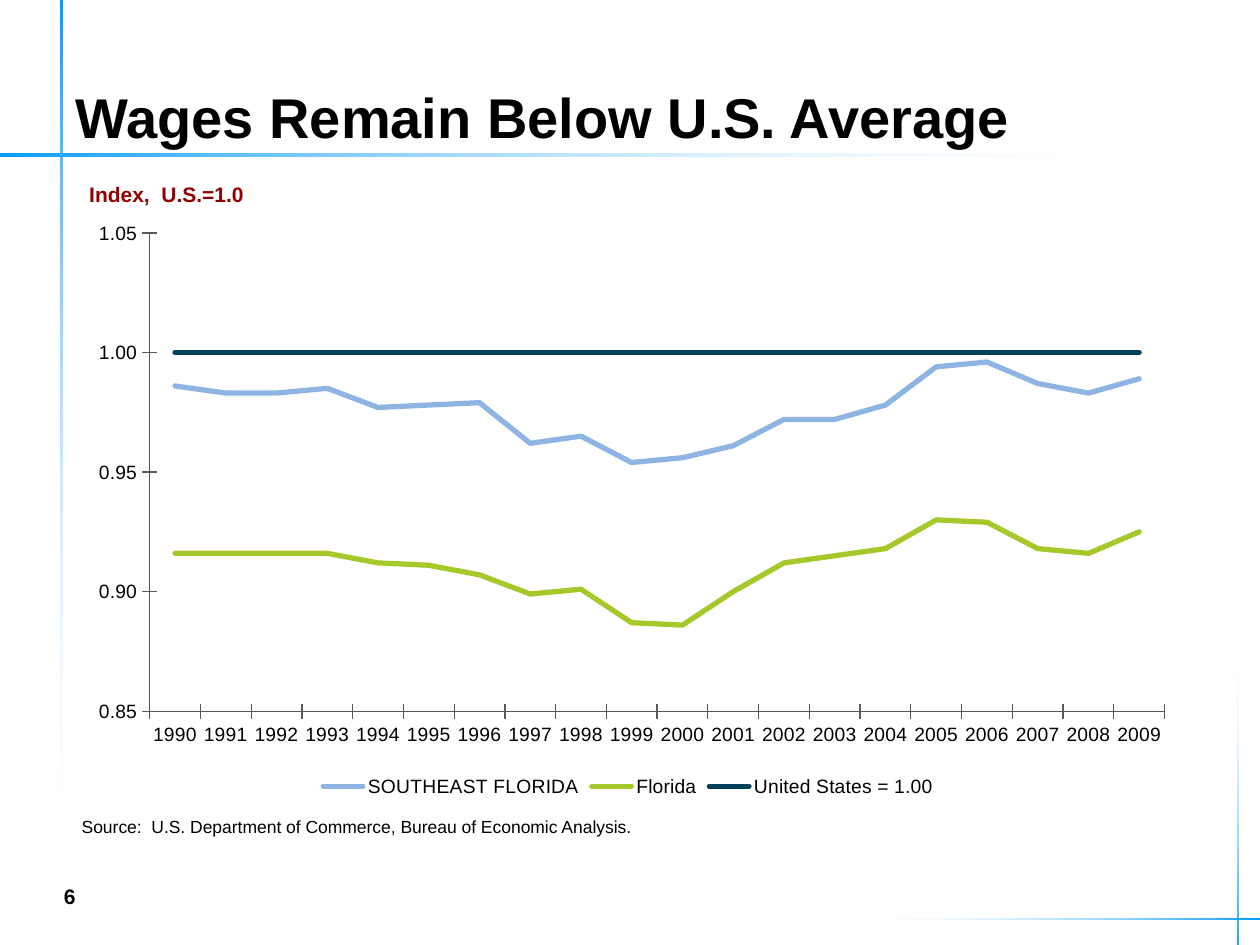
from lxml import etree
from pptx import Presentation
from pptx import util as u
from pptx.chart import data as chart_data
from pptx.dml.color import RGBColor
from pptx.enum import chart as charts, dml, shapes, text
from pptx.oxml import parse_xml
from pptx.oxml.ns import nsdecls, qn

BLACK = RGBColor(0, 0, 0)
WHITE = RGBColor(255, 255, 255)
BRIGHT_BLUE = RGBColor(0x00, 0x99, 0xFF)
DARK_RED = RGBColor(0x92, 0x00, 0x00)
AXIS_GREY = RGBColor(0x59, 0x59, 0x59)
PALE_BLUE = RGBColor(0x8E, 0xB4, 0xE3)
GREEN = RGBColor(0xA5, 0xC9, 0x2B)
NAVY = RGBColor(0x02, 0x40, 0x5C)
FONT = "Arial"

TITLE = "Wages Remain Below U.S. Average"
YEARS = [str(year) for year in range(1990, 2010)]
WAGES = [
    ("SOUTHEAST FLORIDA", PALE_BLUE,
     [0.986, 0.983, 0.983, 0.985, 0.977, 0.978, 0.979, 0.962, 0.965, 0.954,
      0.956, 0.961, 0.972, 0.972, 0.978, 0.994, 0.996, 0.987, 0.983, 0.989]),
    ("Florida", GREEN,
     [0.916, 0.916, 0.916, 0.916, 0.912, 0.911, 0.907, 0.899, 0.901, 0.887,
      0.886, 0.9, 0.912, 0.915, 0.918, 0.93, 0.929, 0.918, 0.916, 0.925]),
    ("United States = 1.00", NAVY, [1] * len(YEARS)),
]
LABELS = [
    ("6", (0.41, 6.91, 0.73, 0.4), 12, BLACK, True, text.MSO_ANCHOR.MIDDLE),
    ("Source:  U.S. Department of Commerce, Bureau of Economic Analysis.",
     (0.55, 6.43, 5.49, 0.27), 10, BLACK, False, text.MSO_ANCHOR.TOP),
    ("Index,  U.S.=1.0", (0.61, 1.39, 4.08, 0.3), 12, DARK_RED, True, text.MSO_ANCHOR.TOP),
]
FADING_RULES = [
    ((-0.17, 1.22, 9.4, 0.02), 0),
    ((0.48, -0.09, 0.02, 7.07), 270),
    ((6.71, 7.29, 3.35, 0.01), 180),
    ((9.82, 5.04, 0.01, 2.64), 90),
]
CHART_BOX = (0.64, 1.76, 8.69, 4.61)
PLOT_SHARES = {"x": 0.063, "y": 0.019, "w": 0.927, "h": 0.824}


def inches(lengths):
    return [u.Inches(length) for length in lengths]


def style(font, size, color=BLACK, bold=False):
    font.name, font.size, font.bold = FONT, u.Pt(size), bold
    font.color.rgb = color


def add_rule(page, place, angle):
    rule = page.shapes.add_shape(shapes.MSO_SHAPE.RECTANGLE, *inches(place))
    rule.shadow.inherit = False
    rule.line.fill.background()
    rule.fill.gradient()
    rule.fill.gradient_angle = angle
    for stop, color, position in zip(rule.fill.gradient_stops, (BRIGHT_BLUE, WHITE), (0, 1)):
        stop.color.rgb = color
        stop.position = position
    end_color = rule._element.spPr.findall(".//" + qn("a:srgbClr"))[-1]
    etree.SubElement(end_color, qn("a:alpha")).set("val", "0")


def add_title(page):
    title = page.shapes.title
    title.left, title.top, title.width, title.height = inches((0.5, -0.01, 9, 1.25))
    title.text_frame.text = TITLE
    title.text_frame.vertical_anchor = text.MSO_ANCHOR.BOTTOM
    para = title.text_frame.paragraphs[0]
    para.alignment = text.PP_ALIGN.LEFT
    style(para.font, 32, bold=True)


def add_label(page, words, place, size, color, bold, anchor):
    frame = page.shapes.add_textbox(*inches(place)).text_frame
    frame.word_wrap = True
    frame.vertical_anchor = anchor
    frame.text = words
    style(frame.paragraphs[0].font, size, color, bold)


def place_plot(chart):
    area = chart._chartSpace.chart.plotArea
    for old in area.findall(qn("c:layout")):
        area.remove(old)
    modes = '<c:xMode val="edge"/><c:yMode val="edge"/>'
    shares = "".join(f'<c:{side} val="{share}"/>' for side, share in PLOT_SHARES.items())
    area.insert(0, parse_xml(
        f'<c:layout {nsdecls("c")}><c:manualLayout><c:layoutTarget val="inner"/>'
        f'{modes}{shares}</c:manualLayout></c:layout>'))


def add_wage_chart(page):
    data = chart_data.CategoryChartData(number_format="0.000")
    data.categories = YEARS
    for name, _, values in WAGES:
        data.add_series(name, values)
    chart = page.shapes.add_chart(
        charts.XL_CHART_TYPE.LINE, *inches(CHART_BOX), data).chart
    style(chart.font, 11)
    chart.has_title = False
    chart.has_legend = True
    chart.legend.position = charts.XL_LEGEND_POSITION.BOTTOM
    chart.legend.include_in_layout = False
    chart.plots[0].vary_by_categories = False

    for axis in (chart.category_axis, chart.value_axis):
        axis.has_major_gridlines = False
        axis.major_tick_mark = charts.XL_TICK_MARK.CROSS
        axis.minor_tick_mark = charts.XL_TICK_MARK.NONE
        axis.format.line.color.rgb = AXIS_GREY
        axis.format.line.width = u.Pt(0.75)
    scale = chart.value_axis
    scale.minimum_scale, scale.maximum_scale, scale.major_unit = 0.85, 1.05, 0.05
    scale.tick_labels.number_format = "#,##0.00"
    scale.tick_labels.number_format_is_linked = False

    for series, (_, color, _) in zip(chart.plots[0].series, WAGES):
        series.smooth = False
        series.marker.style = charts.XL_MARKER_STYLE.NONE
        series.format.line.color.rgb = color
        series.format.line.width = u.Pt(3)
        series.format.line.dash_style = dml.MSO_LINE.SOLID
        series._element.find(".//" + qn("a:ln")).set("cap", "rnd")
    place_plot(chart)


def main():
    deck = Presentation()
    deck.slide_width, deck.slide_height = inches((10, 7.5))
    page = deck.slides.add_slide(deck.slide_layouts[5])
    for place, angle in FADING_RULES:
        add_rule(page, place, angle)
    add_title(page)
    add_wage_chart(page)
    for label in LABELS:
        add_label(page, *label)
    deck.save("out.pptx")


if __name__ == "__main__":
    main()
